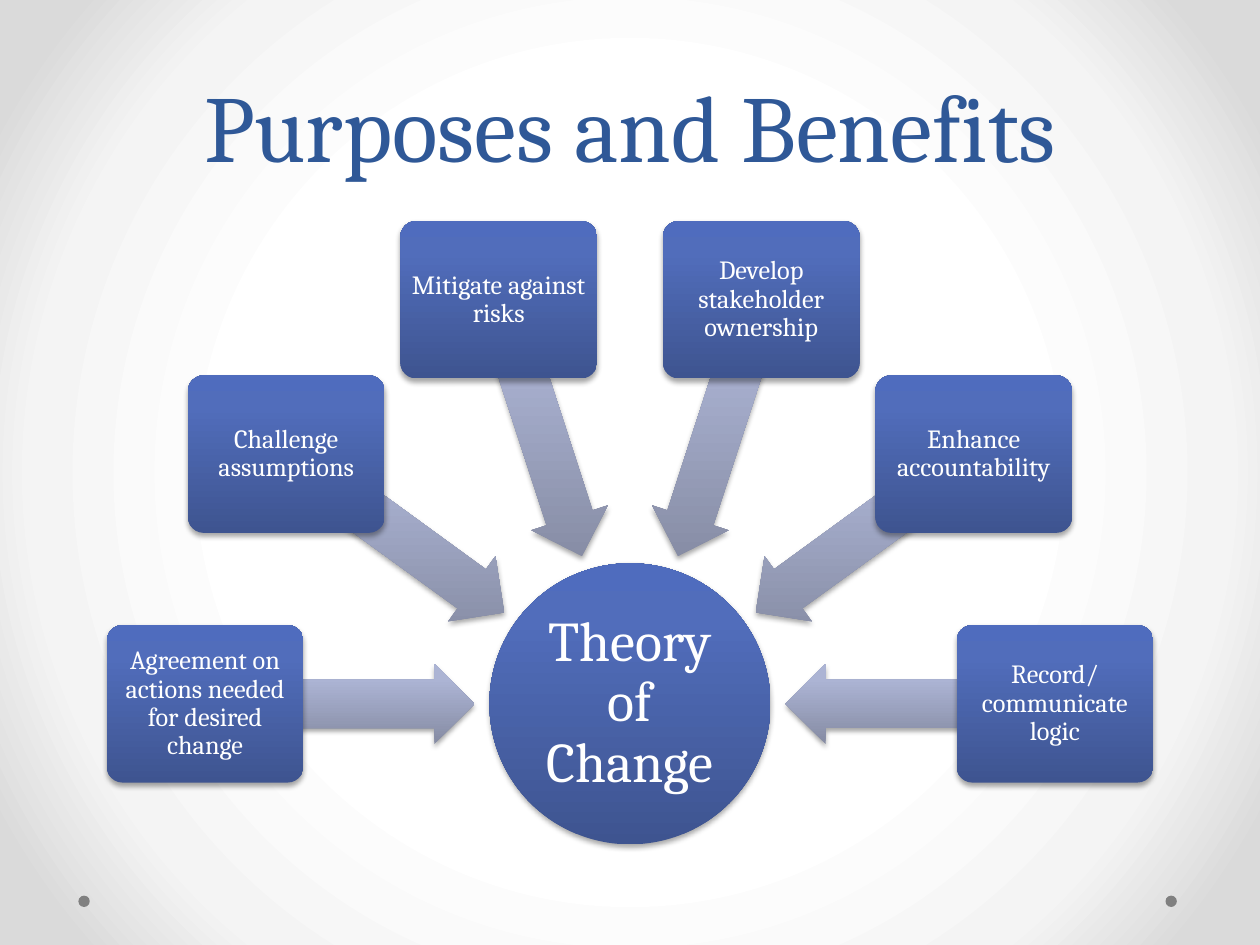
from math import cos, radians, sin

from lxml.etree import SubElement
from pptx import Presentation
from pptx.dml.color import RGBColor
from pptx.enum.shapes import MSO_SHAPE
from pptx.enum.text import MSO_ANCHOR, PP_ALIGN
from pptx.oxml import parse_xml
from pptx.oxml.ns import nsdecls, qn
from pptx.util import Pt

FONT = "Cambria"
BLUE_STOPS = [(0, "3E5490"), (80, "516DBB"), (100, "4F6CBE")]
GREY_STOPS = [(0, "858BA3"), (80, "ACB4D4"), (100, "ACB5D6")]
BACKGROUND_STOPS = [(50, "FFFFFF"), (76, "F4F4F4"), (92, "DADADA")]
UPWARD = '<a:lin ang="16200000" scaled="0"/>'
FROM_CENTRE = ('<a:path path="circle"><a:fillToRect l="50000" t="50000" '
               'r="50000" b="50000"/></a:path>')


def paint_gradient(properties, stops, direction):
    """Replace the solid fill of a properties element with a gradient."""
    stop_xml = "".join(
        f'<a:gs pos="{position * 1000}"><a:srgbClr val="{color}"/></a:gs>'
        for position, color in stops)
    gradient = parse_xml(
        f'<a:gradFill {nsdecls("a")} rotWithShape="0">'
        f'<a:gsLst>{stop_xml}</a:gsLst>{direction}</a:gradFill>')
    properties.replace(properties.find(qn("a:solidFill")), gradient)


def write_text(shape, text, size, color, spacing, anchor):
    frame = shape.text_frame
    frame.word_wrap = True
    frame.vertical_anchor = anchor
    paragraph = frame.paragraphs[0]
    paragraph.alignment = PP_ALIGN.CENTER
    paragraph.line_spacing = spacing
    run = paragraph.add_run()
    run.text = text
    run.font.name = FONT
    run.font.size = Pt(size)
    run.font.color.rgb = RGBColor.from_string(color)


presentation = Presentation()
presentation.slide_width = Pt(720)
presentation.slide_height = Pt(540)
slide = presentation.slides.add_slide(presentation.slide_layouts[6])
shapes = slide.shapes

slide.background.fill.solid()
paint_gradient(slide.element.find(".//" + qn("p:bgPr")), BACKGROUND_STOPS, FROM_CENTRE)

for dot_left in (666, 44.8):
    dot = shapes.add_shape(MSO_SHAPE.OVAL, Pt(dot_left), Pt(511.8), Pt(6.5), Pt(6.5))
    dot.shadow.inherit = False
    dot.fill.solid()
    dot.fill.fore_color.rgb = RGBColor.from_string("808080")
    dot.line.fill.background()

title = shapes.add_textbox(Pt(36), Pt(-18.7), Pt(648), Pt(126))
write_text(title, "Purposes and Benefits", 54, "2F5897", Pt(58), MSO_ANCHOR.BOTTOM)

# Boxes and arrows sit on two arcs around the hub, 36 degrees apart
HUB_X, HUB_Y, HUB_SIZE = 360, 402.2, 160.6
ARROW_RADIUS, ARROW_WIDTH, ARROW_HEIGHT = 165.8, 154, 46
BOX_RADIUS, BOX_WIDTH, BOX_HEIGHT = 242.8, 112.4, 90
benefits = [
    "Agreement on actions needed for desired change",
    "Challenge assumptions",
    "Mitigate against risks",
    "Develop stakeholder ownership",
    "Enhance accountability",
    "Record/communicate logic",
]

# Each part: preset, radius, angle, width, height, stops, adjustments, text, size, inset
parts = [(MSO_SHAPE.OVAL, 0, 0, HUB_SIZE, HUB_SIZE, BLUE_STOPS, [],
          "Theory of Change", 32, 1.5)]
for index, benefit in enumerate(benefits):
    angle = 180 + 36 * index
    parts.append((MSO_SHAPE.LEFT_ARROW, ARROW_RADIUS, angle, ARROW_WIDTH, ARROW_HEIGHT,
                  GREY_STOPS, [0.6, 0.5], "", 0, 0))
    parts.append((MSO_SHAPE.ROUNDED_RECTANGLE, BOX_RADIUS, angle, BOX_WIDTH, BOX_HEIGHT,
                  BLUE_STOPS, [0.1], benefit, 15, 2.2))

for preset, radius, angle, width, height, stops, adjustments, text, size, inset in parts:
    left = HUB_X + radius * cos(radians(angle)) - width / 2
    top = HUB_Y + radius * sin(radians(angle)) - height / 2
    shape = shapes.add_shape(preset, Pt(left), Pt(top), Pt(width), Pt(height))
    for position, value in enumerate(adjustments):
        shape.adjustments[position] = value
    if preset == MSO_SHAPE.LEFT_ARROW:
        shape.rotation = angle % 360

    shape.fill.solid()
    properties = shape.element.spPr
    paint_gradient(properties, stops, UPWARD)
    shape.line.fill.background()

    shape.shadow.inherit = False
    shadow = SubElement(properties.find(qn("a:effectLst")), qn("a:outerShdw"),
                        blurRad=str(Pt(3.1)), dist=str(Pt(1.8)), dir="5400000",
                        rotWithShape="0")
    shadow_color = SubElement(shadow, qn("a:srgbClr"), val="000000")
    SubElement(shadow_color, qn("a:alpha"), val="35000")

    if text:
        frame = shape.text_frame
        frame.margin_left = frame.margin_right = Pt(inset)
        frame.margin_top = frame.margin_bottom = Pt(inset)
        write_text(shape, text, size, "FFFFFF", 0.9, MSO_ANCHOR.MIDDLE)

presentation.save("out.pptx")
